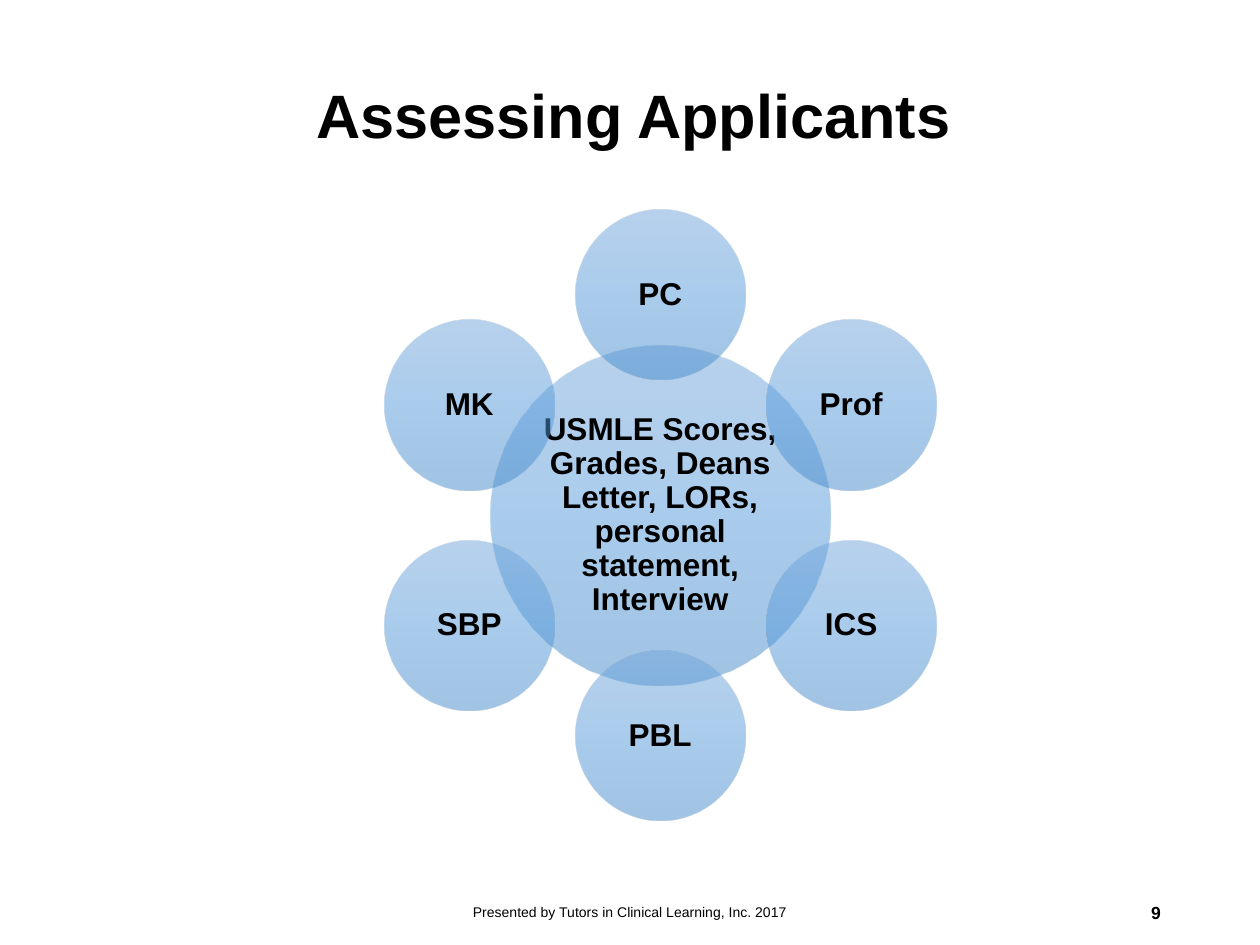
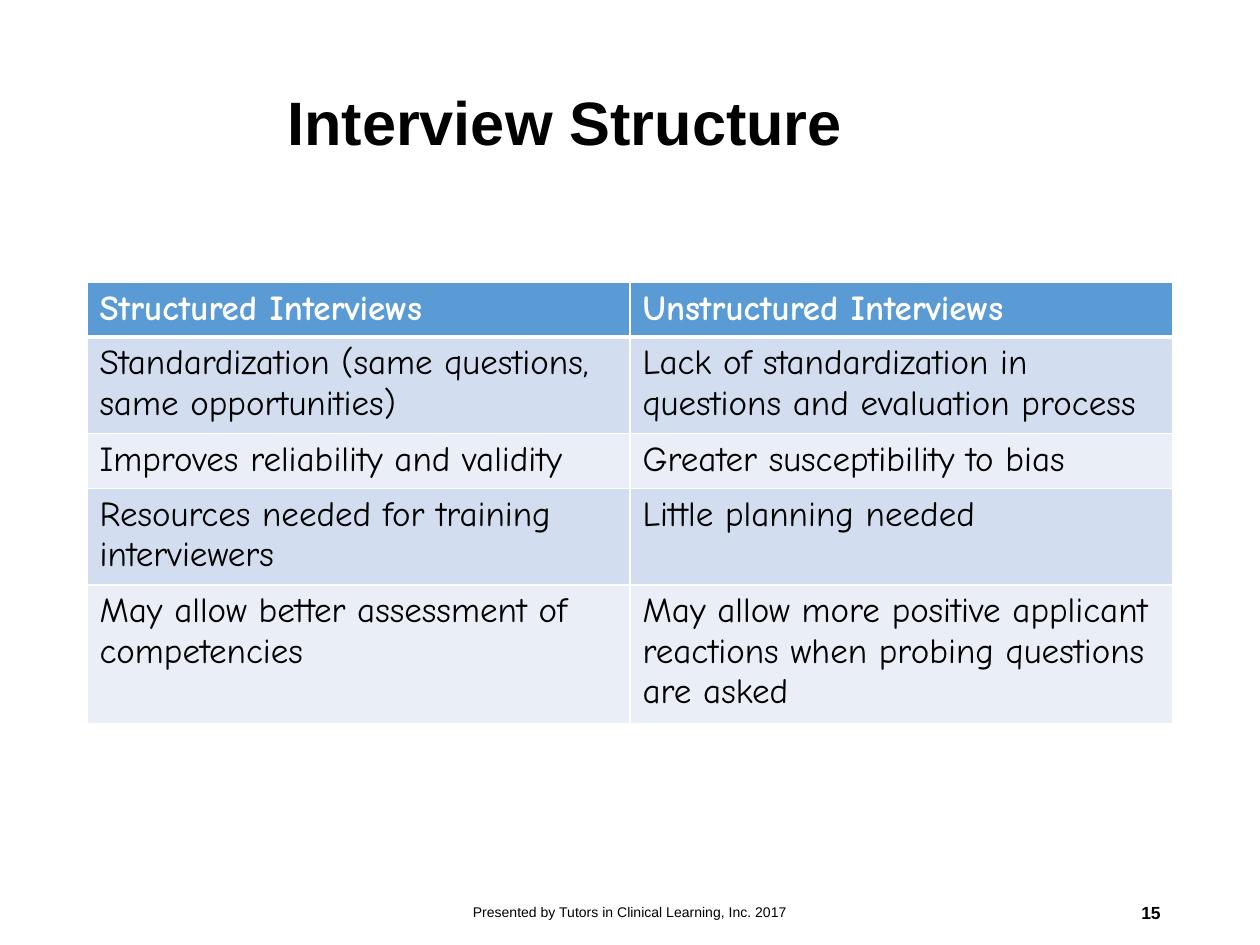
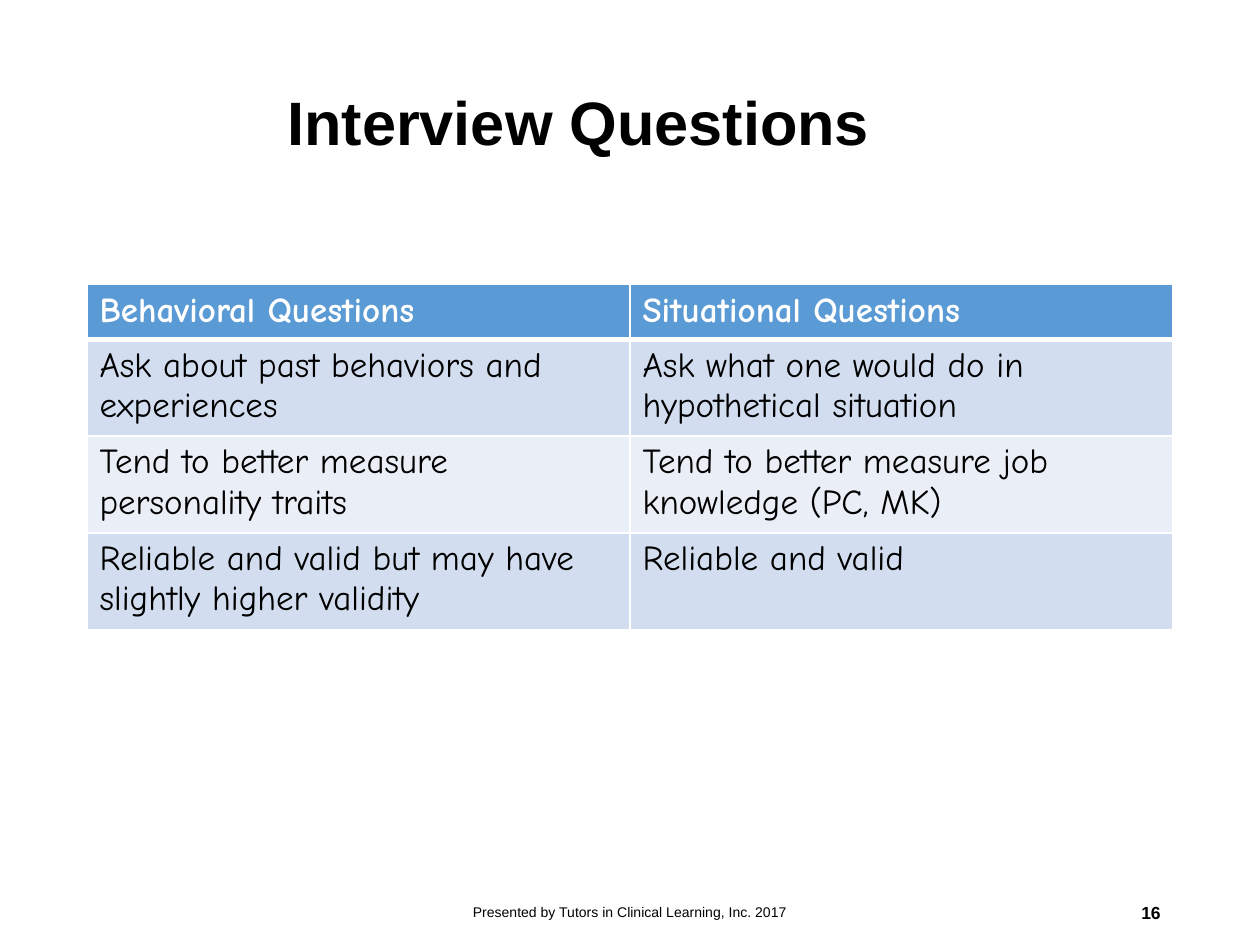
from math import cos, radians, sin

from lxml import etree
from pptx import Presentation
from pptx.dml.color import RGBColor
from pptx.enum.shapes import MSO_SHAPE
from pptx.enum.text import MSO_ANCHOR, MSO_AUTO_SIZE, PP_ALIGN
from pptx.oxml import parse_xml
from pptx.oxml.ns import nsdecls, qn
from pptx.util import Pt

PX = 9144  # 100 px to the inch
BLACK, WHITE = "000000", "FFFFFF"
HEADER_FILL, BAND_FILLS = "5B9BD5", ("D2DEEF", "EAEFF7")
CIRCLE_STOPS = ((0, "71A6DB"), (50, "559BDB"), (100, "448ACA"))
FOOTER = "Presented by Tutors in Clinical Learning, Inc. 2017"

HUB = "USMLE Scores, Grades, Deans Letter, LORs, personal statement, Interview"
COMPETENCIES = ("PC", "Prof", "ICS", "PBL", "SBP", "MK")
HUB_X, HUB_Y, ORBIT = 524, 409, 175
HUB_SIZE, PETAL_SIZE = 270, 135

STRUCTURE = (
    ("Structured Interviews", "Unstructured Interviews"),
    ("Standardization (same questions, same opportunities)",
     "Lack of standardization in questions and evaluation process"),
    ("Improves reliability and validity", "Greater susceptibility to bias"),
    ("Resources needed for training interviewers", "Little planning needed"),
    ("May allow better assessment of competencies",
     "May allow more positive applicant reactions when probing questions are asked"),
)
QUESTIONS = (
    ("Behavioral Questions", "Situational Questions"),
    ("Ask about past behaviors and experiences",
     "Ask what one would do in hypothetical situation"),
    ("Tend to better measure personality traits",
     "Tend to better measure job knowledge (PC, MK)"),
    ("Reliable and valid but may have slightly higher validity", "Reliable and valid"),
)


def px(*lengths):
    return [round(n * PX) for n in lengths]


def write(tf, text, size, color=BLACK, bold=False, font="Arial", align=PP_ALIGN.LEFT):
    tf.text = text
    tf.word_wrap = True
    p = tf.paragraphs[0]
    p.alignment = align
    f = p.runs[0].font
    f.name, f.size, f.bold = font, Pt(size), bold
    f.color.rgb = RGBColor.from_string(color)
    return p


prs = Presentation()
prs.slide_width, prs.slide_height = px(1000, 750)

# Titles and footers
slides = []
for title, number, x, y in (("Assessing Applicants", 9, 241, 22),
                            ("Interview Structure", 15, 218, 27),
                            ("Interview Questions", 16, 218, 27)):
    s = prs.slides.add_slide(prs.slide_layouts[5])
    slides.append(s)
    sp = s.shapes.title
    sp.left, sp.top, sp.width, sp.height = px(x, y, 714, 145)
    write(sp.text_frame, title, 35, bold=True).line_spacing = 0.9
    sp.text_frame.auto_size = MSO_AUTO_SIZE.NONE
    sp.text_frame.vertical_anchor = MSO_ANCHOR.MIDDLE
    for text, left, width, size, bold, align in (
            (FOOTER, 331, 338, 8, False, PP_ALIGN.CENTER),
            (str(number), 706, 225, 10, True, PP_ALIGN.RIGHT)):
        sp = s.shapes.add_textbox(*px(left, 704, width, 40))
        sp.text_frame.vertical_anchor = MSO_ANCHOR.MIDDLE
        write(sp.text_frame, text, size, bold=bold, align=align)

# Hub circle with the competencies evenly spaced around it
circles = [(HUB, HUB_X, HUB_Y, HUB_SIZE)]
for i, name in enumerate(COMPETENCIES):
    angle = radians(360 / len(COMPETENCIES) * i)
    circles.append((name, HUB_X + ORBIT * sin(angle), HUB_Y - ORBIT * cos(angle), PETAL_SIZE))

stops = "".join(f'<a:gs pos="{pos * 1000}"><a:srgbClr val="{color}">'
                f'<a:alpha val="50000"/></a:srgbClr></a:gs>' for pos, color in CIRCLE_STOPS)
group = slides[0].shapes.add_group_shape()
for text, x, y, size in circles:
    sp = group.shapes.add_shape(MSO_SHAPE.OVAL, *px(x - size / 2, y - size / 2, size, size))
    sp.shadow.inherit = False
    sp.line.fill.background()
    sp.fill.gradient()
    grad = sp.fill._xPr.find(qn("a:gradFill"))
    grad.getparent().replace(grad, parse_xml(
        f'<a:gradFill {nsdecls("a")} rotWithShape="1"><a:gsLst>{stops}</a:gsLst>'
        f'<a:lin ang="5400000" scaled="0"/></a:gradFill>'))
    tf = sp.text_frame
    tf.margin_left, tf.margin_top, tf.margin_right, tf.margin_bottom = px(3, 3, 3, 3)
    tf.vertical_anchor = MSO_ANCHOR.MIDDLE
    write(tf, text, 18, bold=True, align=PP_ALIGN.CENTER).line_spacing = 0.9

# Comparison tables
for s, rows, top, height in ((slides[1], STRUCTURE, 224, 321), (slides[2], QUESTIONS, 226, 251)):
    frame = s.shapes.add_table(len(rows), 2, *px(69, top, 862, 41 * len(rows)))
    frame.height = px(height)[0]
    for r, texts in enumerate(rows):
        header = r == 0
        for c, text in enumerate(texts):
            cell = frame.table.cell(r, c)
            write(cell.text_frame, text, 20, WHITE if header else BLACK, header, "Comic Neue")
            tcPr = cell._tc.get_or_add_tcPr()
            for side in "LRTB":
                thick = (r, side) in ((0, "B"), (1, "T"))
                ln = etree.SubElement(tcPr, qn(f"a:ln{side}"), w=str(Pt(3 if thick else 1)))
                fill = etree.SubElement(ln, qn("a:solidFill"))
                etree.SubElement(fill, qn("a:srgbClr"), val=WHITE)
            cell.fill.solid()
            cell.fill.fore_color.rgb = RGBColor.from_string(
                HEADER_FILL if header else BAND_FILLS[(r - 1) % 2])

prs.save("out.pptx")
